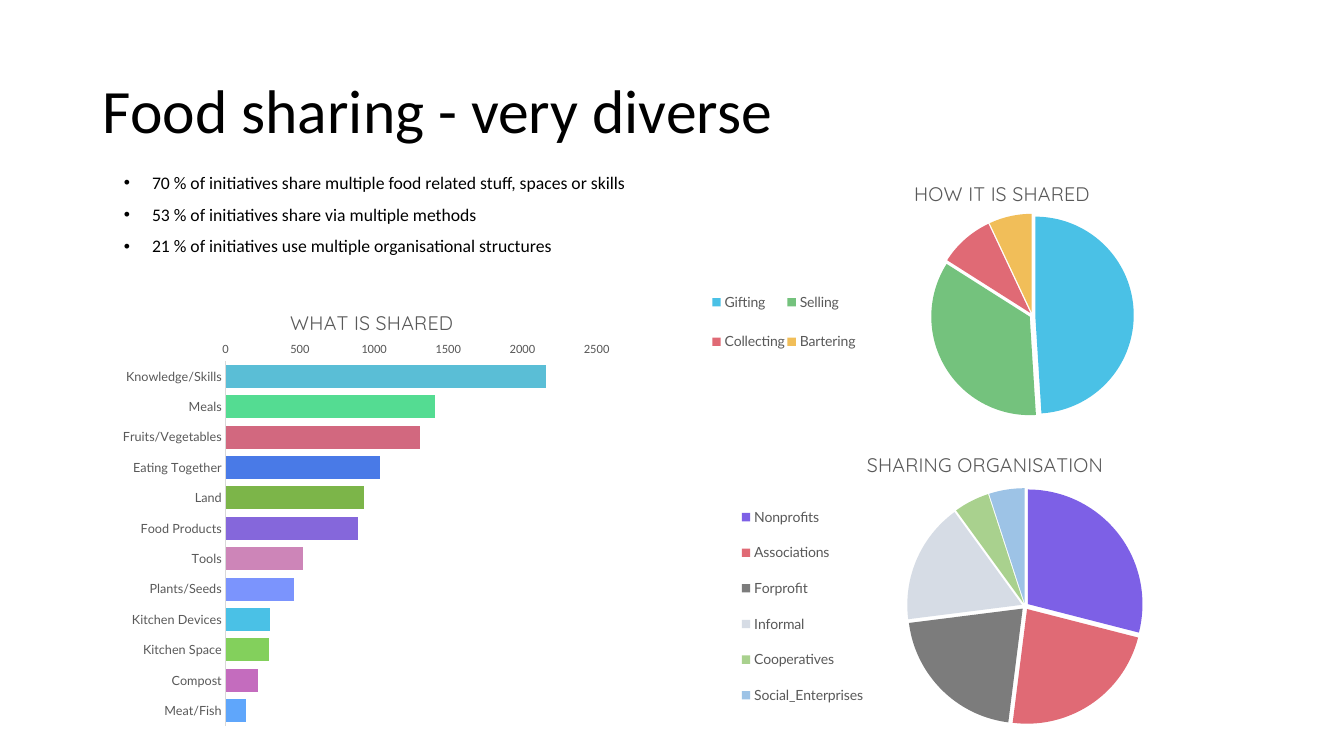
from lxml import etree
from pptx import Presentation
from pptx.chart.data import CategoryChartData
from pptx.dml.color import RGBColor
from pptx.enum import chart as ch, text
from pptx.oxml import ns
from pptx.util import Inches, Pt

# Content
HEADLINE = "Food sharing - very diverse"
FINDINGS = [
    "70 % of initiatives share multiple food related stuff, spaces or skills",
    "53 % of initiatives share via multiple methods",
    "21 % of initiatives use multiple organisational structures",
]
COLORS = {"ink": "000000", "label": "595959", "axis": "D9D9D9"}

# Rows: category, value, colour. Layouts: x, y, width, height as shares of the chart
WHAT = {
    "title": "WHAT IS SHARED", "box": (1.13, 2.8, 5.04, 4.47),
    "title_at": (0.34, 0.05), "plot": (0.22, 0.175, 0.73, 0.81),
    "rows": [
        ("Knowledge/Skills", 2160, "5ABED6"), ("Meals", 1410, "54DC92"),
        ("Fruits/Vegetables", 1310, "D2687F"), ("Eating Together", 1040, "497AE7"),
        ("Land", 930, "7CB549"), ("Food Products", 890, "8567DB"),
        ("Tools", 520, "CD85B8"), ("Plants/Seeds", 460, "7B94FD"),
        ("Kitchen Devices", 300, "4AC1E6"), ("Kitchen Space", 290, "83D05C"),
        ("Compost", 220, "C46CBE"), ("Meat/Fish", 140, "5FA6FB"),
    ],
}
PIES = [
    {
        "title": "HOW IT IS SHARED", "box": (7.04, 1.55, 4.74, 2.72),
        "title_at": (0.42, 0.07), "plot": (0.39, 0.21, 0.57, 0.74),
        "legend": (0, 0.42, 0.31, 0.37),
        "rows": [
            ("Gifting", 49, "4AC1E6"), ("Selling", 35, "74C27D"),
            ("Collecting", 9, "E06A75"), ("Bartering", 7, "F1BE59"),
        ],
    },
    {
        "title": "SHARING ORGANISATION", "box": (6.67, 4.2, 5.26, 3.3),
        "title_at": (0.36, 0.07), "plot": (0.42, 0.195, 0.49, 0.71),
        "legend": (0.12, 0.2, 0.25, 0.7),
        "rows": [
            ("Nonprofits", 29, "7D60E6"), ("Associations", 23, "E06A75"),
            ("Forprofit", 21, "7C7C7C"), ("Informal", 17, "D6DCE5"),
            ("Cooperatives", 5, "A9D18E"), ("Social_Enterprises", 5, "9DC3E6"),
        ],
    },
]
EXPLOSION = 3


def style(font, size, name, color):
    font.size, font.name = Pt(size), name
    font.color.rgb = RGBColor.from_string(COLORS[color])


def place(part, index, shares, inner=False):
    """Give a chart part a manual layout."""
    for old in part.findall(ns.qn("c:layout")):
        part.remove(old)
    layout = etree.Element(ns.qn("c:layout"))
    part.insert(index, layout)
    manual = etree.SubElement(layout, ns.qn("c:manualLayout"))
    settings = [("layoutTarget", "inner")] if inner else []
    settings += [("xMode", "edge"), ("yMode", "edge"), *zip("xywh", shares)]
    for tag, value in settings:
        etree.SubElement(manual, ns.qn(f"c:{tag}"), val=str(value))


def add_chart(kind, content):
    data = CategoryChartData()
    data.categories = [name for name, _, _ in content["rows"]]
    data.add_series("Series 1", [value for _, value, _ in content["rows"]])
    box = [Inches(n) for n in content["box"]]
    chart = slide.shapes.add_chart(kind, *box, data).chart
    style(chart.font, 10, "Calibri", "ink")

    chart.has_title = True
    heading = chart.chart_title.text_frame
    heading.text = content["title"]
    run = heading.paragraphs[0].runs[0]
    style(run.font, 14, "Quicksand", "label")
    run.font.bold = False
    place(chart.chart_title._element, 1, content["title_at"])
    plot_area = chart._chartSpace.find(".//" + ns.qn("c:plotArea"))
    place(plot_area, 0, content["plot"], inner=True)

    chart.has_legend = "legend" in content
    chart.plots[0].vary_by_categories = "legend" in content
    for i, (_, _, color) in enumerate(content["rows"]):
        fill = chart.series[0].points[i].format.fill
        fill.solid()
        fill.fore_color.rgb = RGBColor.from_string(color)
    return chart


def explode(series):
    points = series._element.findall(ns.qn("c:dPt"))
    followers = [points[0]] + [point.find(ns.qn("c:spPr")) for point in points]
    for follower in followers:
        follower.addprevious(
            etree.Element(ns.qn("c:explosion"), val=str(EXPLOSION)))


prs = Presentation()
prs.slide_width, prs.slide_height = Inches(13.33), Inches(7.5)
slide = prs.slides.add_slide(prs.slide_layouts[5])

# Headline
headline = slide.shapes.title
headline.left, headline.top = Inches(0.92), Inches(0.4)
headline.width, headline.height = Inches(11.5), Inches(1.45)
headline.text_frame.text = HEADLINE
headline.text_frame.vertical_anchor = text.MSO_ANCHOR.MIDDLE
line = headline.text_frame.paragraphs[0]
line.alignment, line.line_spacing = text.PP_ALIGN.LEFT, 0.9
style(line.runs[0].font, 44, "Calibri", "ink")

# Bar chart: what is shared
bars = add_chart(ch.XL_CHART_TYPE.BAR_CLUSTERED, WHAT)
bars.plots[0].gap_width = 32
goods, amounts = bars.category_axis, bars.value_axis
goods.reverse_order = True
goods.format.line.color.rgb = RGBColor.from_string(COLORS["axis"])
goods.format.line.width = Pt(0.75)
amounts.minimum_scale, amounts.maximum_scale, amounts.major_unit = 0, 2500, 500
amounts.has_major_gridlines = False
amounts.format.line.fill.background()
for axis, font_name in ((goods, "Lato"), (amounts, "Calibri")):
    axis.major_tick_mark = axis.minor_tick_mark = ch.XL_TICK_MARK.NONE
    style(axis.tick_labels.font, 9, font_name, "label")

# Pie charts: how it is shared, and by whom
for content in PIES:
    pie = add_chart(ch.XL_CHART_TYPE.PIE, content)
    explode(pie.series[0])
    pie.legend.position = ch.XL_LEGEND_POSITION.LEFT
    pie.legend.include_in_layout = False
    style(pie.legend.font, 10, "Lato", "label")
    place(pie.legend._element, 1, content["legend"])

# Findings
findings = slide.shapes.add_textbox(
    Inches(1.13), Inches(1.55), Inches(6.64), Inches(1.06)).text_frame
findings.word_wrap = True
findings.text = "\n".join(FINDINGS)
for item in findings.paragraphs:
    item.line_spacing = 1.5
    style(item.runs[0].font, 12.6, "Calibri", "ink")
    props = item._p.get_or_add_pPr()
    props.set("marL", str(Inches(0.28)))
    props.set("indent", str(-Inches(0.28)))
    etree.SubElement(props, ns.qn("a:buFont"), typeface="Arial")
    etree.SubElement(props, ns.qn("a:buChar"), char="•")

prs.save("out.pptx")
